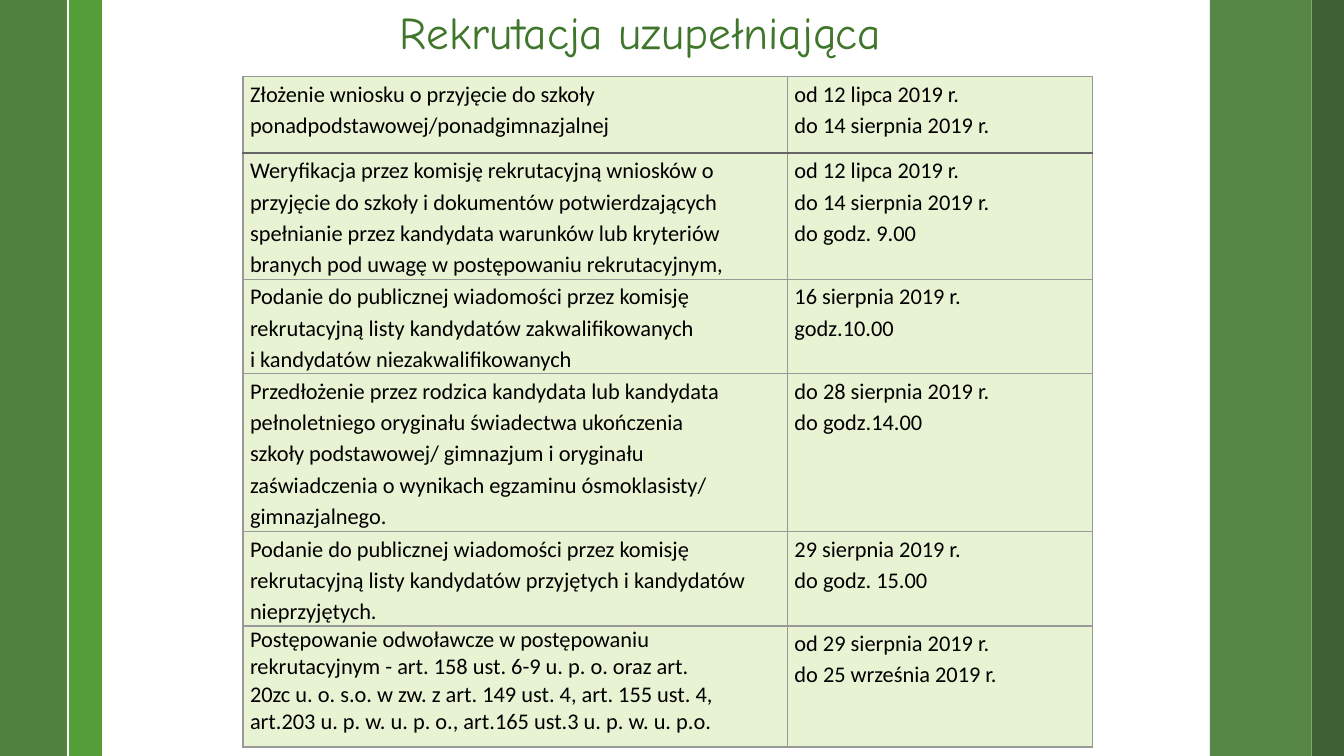
from lxml import etree
from pptx import Presentation
from pptx.dml.color import RGBColor
from pptx.enum.shapes import MSO_CONNECTOR as CONN, MSO_SHAPE as SHAPE
from pptx.enum.text import MSO_ANCHOR as ANCHOR, MSO_AUTO_SIZE as AUTO, PP_ALIGN as ALIGN
from pptx.oxml.ns import qn
from pptx.util import Inches, Pt

WHITE = RGBColor(0xFF, 0xFF, 0xFF)
BLACK = RGBColor(0, 0, 0)
LIGHT_GREEN = RGBColor(0x54, 0x9E, 0x39)
GREEN = RGBColor(0x3F, 0x76, 0x2B)
DARK_GREEN = RGBColor(0x2A, 0x4F, 0x1C)
CELL_GREEN = RGBColor(0xE8, 0xF3, 0xD4)
GRAY = RGBColor(0x99, 0x99, 0x99)
DARK_GRAY = RGBColor(0x66, 0x66, 0x66)

prs = Presentation()
prs.slide_width, prs.slide_height = Inches(13.33), Inches(7.5)


def wide(percent):
    return round(prs.slide_width * percent / 100)


def high(percent):
    return round(prs.slide_height * percent / 100)


slide = prs.slides.add_slide(prs.slide_layouts[5])
shapes = slide.shapes

# Side bars: left and width in percent of the slide, colour, opacity
for left, width, color, opacity in [
    (5.1, 2.48, LIGHT_GREEN, 100),
    (0, 5.03, GREEN, 90),
    (90.02, 7.58, GREEN, 87),
    (97.6, 2.4, DARK_GREEN, 90),
]:
    bar = shapes.add_shape(SHAPE.RECTANGLE, wide(left), 0, wide(width), high(100))
    bar.shadow.inherit = False
    bar.fill.solid()
    bar.fill.fore_color.rgb = color
    bar.line.fill.background()
    if opacity < 100:
        clr = bar.fill._xPr.find(".//" + qn("a:srgbClr"))
        etree.SubElement(clr, qn("a:alpha"), val=str(opacity * 1000))

# White rule between the left bars
rule = shapes.add_connector(CONN.STRAIGHT, wide(5.03), 0, wide(5.03), high(100))
rule.line.color.rgb = WHITE
rule.line.width = Pt(1.5)
etree.SubElement(rule._element.spPr, qn("a:effectLst"))

# Title
title = shapes.title
title.left, title.top, title.width, title.height = wide(22.2), 0, wide(50.94), high(8.53)
tf = title.text_frame
tf.text = "Rekrutacja uzupełniająca"
tf.auto_size = AUTO.NONE
tf.vertical_anchor = ANCHOR.BOTTOM
p = tf.paragraphs[0]
p.alignment = ALIGN.CENTER
p.line_spacing = 0.9
for name, value in {"name": "Comic Neue", "size": Pt(32.4)}.items():
    setattr(p.runs[0].font, name, value)
p.runs[0].font.color.rgb = GREEN

# Schedule: row height in percent, line spacing of the task, task, dates
SCHEDULE = [
    (10.13, 1.15,
     "Złożenie wniosku o przyjęcie do szkoły ponadpodstawowej/ponadgimnazjalnej",
     "od 12 lipca 2019 r.\ndo 14 sierpnia 2019 r."),
    (16.67, 1.15,
     "Weryfikacja przez komisję rekrutacyjną wniosków o przyjęcie do szkoły "
     "i dokumentów potwierdzających spełnianie przez kandydata warunków lub kryteriów "
     "branych pod uwagę w postępowaniu rekrutacyjnym,",
     "od 12 lipca 2019 r.\ndo 14 sierpnia 2019 r.\ndo godz. 9.00"),
    (12.4, 1.15,
     "Podanie do publicznej wiadomości przez komisję\n"
     "rekrutacyjną listy kandydatów zakwalifikowanych\n"
     "i kandydatów niezakwalifikowanych",
     "16 sierpnia 2019 r.\ngodz.10.00"),
    (20.9, 1.15,
     "Przedłożenie przez rodzica kandydata lub kandydata\n"
     "pełnoletniego oryginału świadectwa ukończenia\n"
     "szkoły podstawowej/ gimnazjum i oryginału\n"
     "zaświadczenia o wynikach egzaminu ósmoklasisty/\n"
     "gimnazjalnego.",
     "do 28 sierpnia 2019 r.\ndo godz.14.00"),
    (12.4, 1.15,
     "Podanie do publicznej wiadomości przez komisję rekrutacyjną listy kandydatów "
     "przyjętych i kandydatów nieprzyjętych.",
     "29 sierpnia 2019 r.\ndo godz. 15.00"),
    (16, 1,
     "Postępowanie odwoławcze w postępowaniu\n"
     "rekrutacyjnym - art. 158 ust. 6-9 u. p. o. oraz art.\n"
     "20zc u. o. s.o. w zw. z art. 149 ust. 4, art. 155 ust. 4,\n"
     "art.203 u. p. w. u. p. o., art.165 ust.3 u. p. w. u. p.o.",
     "od 29 sierpnia 2019 r.\ndo 25 września 2019 r."),
]
CELL_FORMAT = {"margin_left": Inches(0.07), "margin_right": Inches(0.07),
               "margin_top": 0, "margin_bottom": 0, "vertical_anchor": ANCHOR.TOP}

total = high(sum(row[0] for row in SCHEDULE))
table = shapes.add_table(len(SCHEDULE), 2, wide(18.08), high(10.13), wide(63.24), total).table
table.first_row = table.horz_banding = False
for column, width in zip(table.columns, (40.51, 22.73)):
    column.width = wide(width)

for i, (height, task_spacing, task, dates) in enumerate(SCHEDULE):
    table.rows[i].height = high(height)
    for j, (text, spacing) in enumerate([(task, task_spacing), (dates, 1.15)]):
        cell = table.cell(i, j)
        cell.text = text
        for name, value in CELL_FORMAT.items():
            setattr(cell, name, value)
        for p in cell.text_frame.paragraphs:
            p.line_spacing = spacing
            font = p.runs[0].font
            font.name, font.size = "Calibri", Pt(16)
            font.color.rgb = BLACK

        # Borders, heavier between the first two rows
        tcPr = cell._tc.get_or_add_tcPr()
        for side in "LRTB":
            heavy = (i, side) in [(0, "B"), (1, "T")]
            ln = etree.SubElement(tcPr, qn("a:ln" + side), w=str(Pt(1.5 if heavy else 1)))
            fill = etree.SubElement(ln, qn("a:solidFill"))
            etree.SubElement(fill, qn("a:srgbClr"), val=str(DARK_GRAY if heavy else GRAY))
        cell.fill.solid()
        cell.fill.fore_color.rgb = CELL_GREEN

prs.save("out.pptx")
